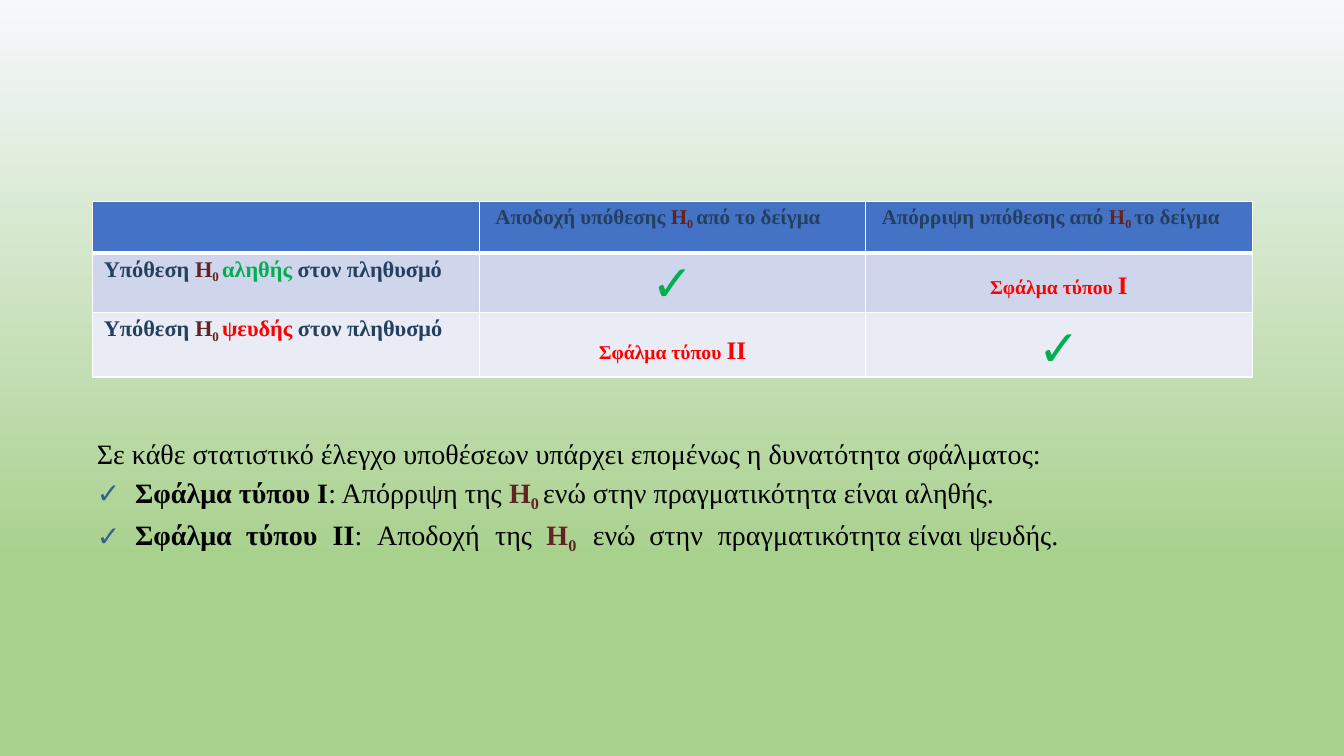
from pptx import Presentation
from pptx.dml.color import RGBColor
from pptx.enum.text import MSO_AUTO_SIZE, PP_ALIGN
from pptx.oxml.ns import qn
from pptx.util import Inches, Pt
from lxml.etree import SubElement

COLORS = {
    "sky": "F6F8FC", "leaf": "A9D18E", "head": "4472C4", "odd": "CFD5EA",
    "even": "E9EBF5", "white": "FFFFFF", "navy": "244060", "wine": "622422",
    "green": "00AF50", "red": "FF0000", "black": "000000", "mark": "375F92",
}
CHECK = "✓"


class Deck:
    font = "Times New Roman"

    def __init__(self):
        self.prs = Presentation()
        self.prs.slide_width = Inches(13.33)
        self.prs.slide_height = Inches(7.5)
        self.slide = self.prs.slides.add_slide(self.prs.slide_layouts[6])

    def color(self, name):
        return RGBColor.from_string(COLORS[name])

    def backdrop(self, top, base, end):
        fill = self.slide.background.fill
        fill.gradient()
        fill.gradient_angle = 270
        for stop, name, place in zip(fill.gradient_stops, (top, base), (0, end)):
            stop.color.rgb = self.color(name)
            stop.position = place

    def style(self, para, runs, size, indent=(0, 0), before=0, align=None):
        """Each run is (text, colour, bold) plus an optional size or "sub"."""
        para.space_before = Pt(before)
        para.alignment = align
        props = para._p.get_or_add_pPr()
        props.set("marL", str(Inches(indent[0])))
        props.set("indent", str(Inches(indent[1])))
        for text, color, bold, *extra in runs:
            run = para.add_run()
            run.text = text
            font = run.font
            font.name = "Arial" if text == CHECK else self.font
            font.bold = bold
            font.color.rgb = self.color(color)
            font.size = Pt(size)
            if extra == ["sub"]:
                run._r.get_or_add_rPr().set("baseline", "-21000")
            elif extra:
                font.size = Pt(extra[0])

    def bullet(self, para, stops):
        props = para._p.get_or_add_pPr()
        tint = SubElement(props, qn("a:buClr"))
        SubElement(tint, qn("a:srgbClr"), val=COLORS["mark"])
        SubElement(props, qn("a:buFont"), typeface="Arial")
        SubElement(props, qn("a:buChar"), char=CHECK)
        tabs = SubElement(props, qn("a:tabLst"))
        for stop in stops:
            SubElement(tabs, qn("a:tab"), pos=str(Inches(stop)), algn="l")

    def edge(self, cell, side, width):
        line = SubElement(cell._tc.get_or_add_tcPr(), qn("a:ln" + side), w=str(Pt(width)))
        fill = SubElement(line, qn("a:solidFill"))
        SubElement(fill, qn("a:srgbClr"), val=COLORS["white"])

    def table(self, left, top, width, heights, rows, fills):
        count = len(rows[0])
        frame = self.slide.shapes.add_table(
            len(rows), count, Inches(left), Inches(top), Inches(width), Inches(sum(heights)))
        grid = frame.table
        for i, (row, height, fill) in enumerate(zip(rows, heights, fills)):
            grid.rows[i].height = Inches(height)
            for j, (inset, look) in enumerate(row):
                cell = grid.cell(i, j)
                cell.margin_left = cell.margin_right = cell.margin_bottom = 0
                cell.margin_top = Inches(inset)
                for side in "LRTB":
                    thick = (i, side) in ((0, "B"), (1, "T"))
                    self.edge(cell, side, 3 if thick else 1)
                cell.fill.solid()
                cell.fill.fore_color.rgb = self.color(fill)
                self.style(cell.text_frame.paragraphs[0], **look)

    def text(self, left, top, width, height):
        box = self.slide.shapes.add_textbox(*map(Inches, (left, top, width, height)))
        frame = box.text_frame
        frame.word_wrap = True
        frame.auto_size = MSO_AUTO_SIZE.SHAPE_TO_FIT_TEXT
        frame.margin_left = frame.margin_right = frame.margin_bottom = 0
        frame.margin_top = Inches(0.01)
        return frame


def null(gap=" "):
    """The H0 symbol with its subscript."""
    return [("Η", "wine", True), ("0" + gap, "wine", True, "sub")]


def head(start, end, indent):
    runs = [(start, "navy", True), *null(), (end, "navy", True)]
    return 0.04, dict(runs=runs, size=15, indent=indent, before=3.1)


def label(word, color):
    runs = [("Υπόθεση ", "navy", True), *null(),
            (word, color, True), (" στον πληθυσμό", "navy", True)]
    return 0.04, dict(runs=runs, size=16, indent=(0.11, 0), before=3.1)


def tick(inset, before):
    return inset, dict(runs=[(CHECK, "green", False)], size=36,
                       before=before, align=PP_ALIGN.CENTER)


def error(kind, inset, before):
    runs = [("Σφάλμα τύπου ", "red", True), (kind, "red", True, 18)]
    return inset, dict(runs=runs, size=14, before=before, align=PP_ALIGN.CENTER)


def main():
    deck = Deck()
    deck.backdrop("sky", "leaf", 0.74)

    # Decision table
    rows = [
        [(0, dict(runs=[], size=15)),
         head("Αποδοχή υπόθεσης ", "από το δείγμα", (0.51, -0.35)),
         head("Απόρριψη υπόθεσης από ", "το δείγμα", (0.66, -0.5))],
        [label("αληθής", "green"), tick(0.03, 2.4), error("Ι", 0.19, 13.8)],
        [label("ψευδής", "red"), error("ΙΙ", 0.24, 17.2), tick(0.08, 5.8)],
    ]
    deck.table(0.92, 2, 11.5, (0.51, 0.59, 0.64), rows, ("head", "odd", "even"))

    # Explanation of the two errors
    frame = deck.text(0.92, 4.26, 11.5, 1.19)
    intro = frame.paragraphs[0]
    deck.style(intro, [("Σε κάθε στατιστικό έλεγχο υποθέσεων υπάρχει επομένως η "
                        "δυνατότητα σφάλματος:", "black", False)], 20, (0.04, 0), 1)
    intro.line_spacing = 1.17
    items = [
        ([("Σφάλμα τύπου Ι", "black", True), (": Απόρριψη της ", "black", False), *null(),
          ("ενώ στην πραγματικότητα είναι αληθής.", "black", False)], [0.42]),
        ([("Σφάλμα\tτύπου\tΙΙ", "black", True), (":\tΑποδοχή\tτης\t", "black", False),
          *null("\t"), ("ενώ\tστην\tπραγματικότητα είναι ψευδής.", "black", False)],
         [0.42, 1.52, 2.38, 2.82, 3.99, 4.5, 4.96, 5.52, 6.2]),
    ]
    for runs, stops in items:
        para = frame.add_paragraph()
        deck.style(para, runs, 20, (0.42, -0.38), 4)
        deck.bullet(para, stops)

    deck.prs.save("out.pptx")


if __name__ == "__main__":
    main()
